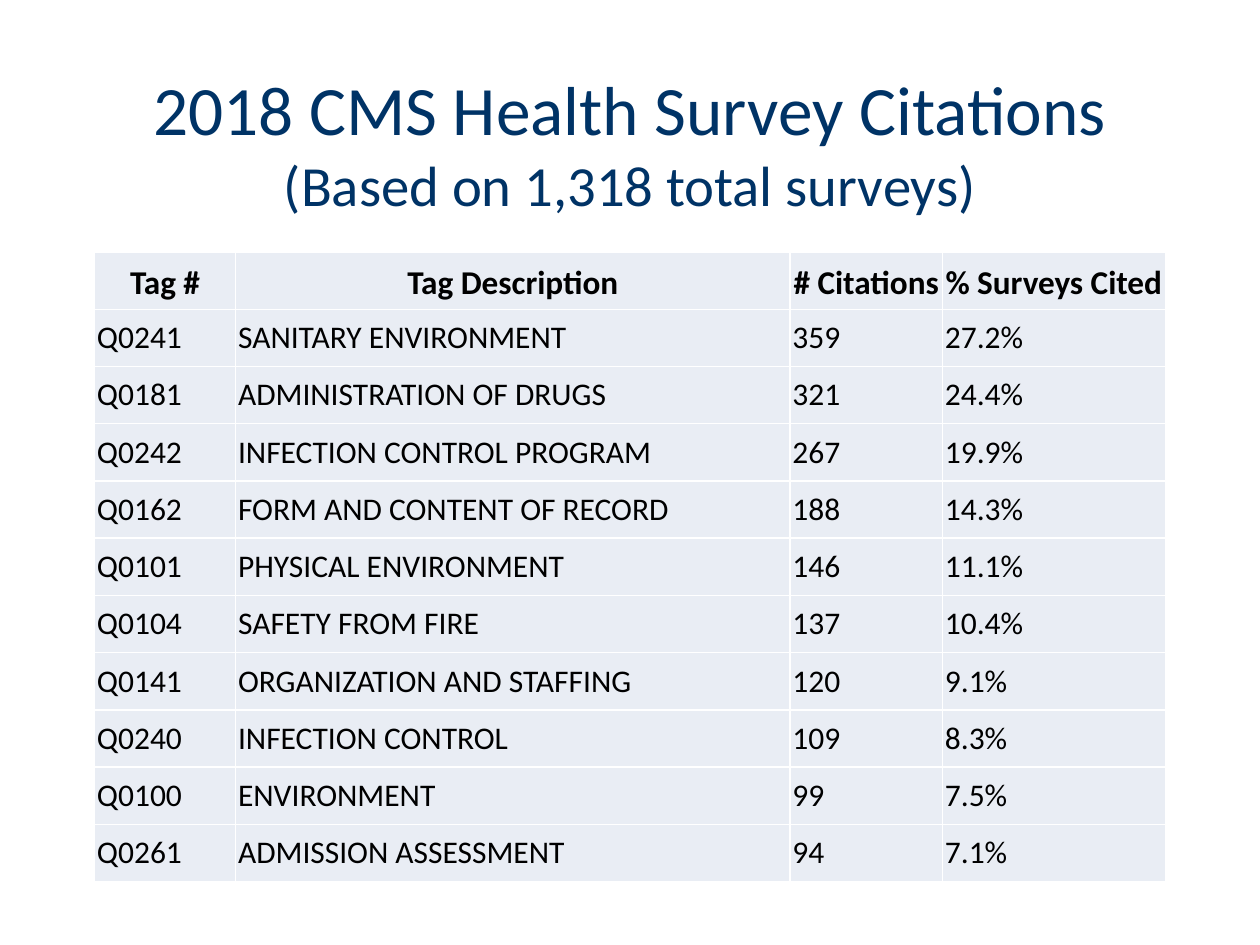
from lxml.etree import SubElement
from pptx import Presentation
from pptx.dml.color import RGBColor
from pptx.enum.text import MSO_ANCHOR, PP_ALIGN
from pptx.oxml.ns import qn
from pptx.util import Inches, Pt

NAVY = RGBColor(0x00, 0x33, 0x66)
BLACK = RGBColor(0x00, 0x00, 0x00)
PALE_BLUE = RGBColor(0xE9, 0xED, 0xF4)
WHITE = RGBColor(0xFF, 0xFF, 0xFF)

TITLE_LINES = [
    ("2018 CMS Health Survey Citations", 39.6),
    ("(Based on 1,318 total surveys)", 32.4),
]
CITATIONS = [
    ("Tag #", "Tag Description", "# Citations", "% Surveys Cited"),
    ("Q0241", "SANITARY ENVIRONMENT", "359", "27.2%"),
    ("Q0181", "ADMINISTRATION OF DRUGS", "321", "24.4%"),
    ("Q0242", "INFECTION CONTROL PROGRAM", "267", "19.9%"),
    ("Q0162", "FORM AND CONTENT OF RECORD", "188", "14.3%"),
    ("Q0101", "PHYSICAL ENVIRONMENT", "146", "11.1%"),
    ("Q0104", "SAFETY FROM FIRE", "137", "10.4%"),
    ("Q0141", "ORGANIZATION AND STAFFING", "120", "9.1%"),
    ("Q0240", "INFECTION CONTROL", "109", "8.3%"),
    ("Q0100", "ENVIRONMENT", "99", "7.5%"),
    ("Q0261", "ADMISSION ASSESSMENT", "94", "7.1%"),
]
COLUMN_WIDTHS = [1.12, 4.4, 1.21, 1.77]
TABLE_HEIGHT = 5

HEADER_CELL = {
    "vertical_anchor": MSO_ANCHOR.BOTTOM,
    "margin_left": Inches(0.01),
    "margin_right": Inches(0.01),
    "margin_top": Inches(0.01),
    "margin_bottom": Inches(0.05),
}
BODY_CELL = {
    "vertical_anchor": MSO_ANCHOR.MIDDLE,
    "margin_left": Inches(0.02),
    "margin_right": Inches(0.02),
    "margin_top": Inches(0.02),
    "margin_bottom": Inches(0.02),
}
HEADER_FONT = {"name": "Calibri", "size": Pt(19), "bold": True}
BODY_FONT = {"name": "Calibri", "size": Pt(18), "bold": False}


def apply_format(target, values):
    for attribute, value in values.items():
        setattr(target, attribute, value)


def add_borders(cell):
    properties = cell._tc.get_or_add_tcPr()
    for position, side in enumerate(("lnL", "lnR", "lnT", "lnB")):
        border = properties.makeelement(qn(f"a:{side}"), {"w": str(Pt(1))})
        fill = SubElement(border, qn("a:solidFill"))
        SubElement(fill, qn("a:srgbClr"), val=str(WHITE))
        properties.insert(position, border)


def add_title(slide):
    title = slide.shapes.add_textbox(Inches(0.5), Inches(0.5), Inches(9), Inches(1.25))
    frame = title.text_frame
    apply_format(frame, {"word_wrap": True, "vertical_anchor": MSO_ANCHOR.MIDDLE})
    heading = frame.paragraphs[0]
    heading.alignment = PP_ALIGN.CENTER
    for index, (line, size) in enumerate(TITLE_LINES):
        if index:
            heading.add_line_break()
        run = heading.add_run()
        run.text = line
        apply_format(run.font, {"name": "Calibri", "size": Pt(size)})
        run.font.color.rgb = NAVY


def add_citations(slide):
    table = slide.shapes.add_table(
        len(CITATIONS), len(COLUMN_WIDTHS), Inches(0.75), Inches(2),
        Inches(sum(COLUMN_WIDTHS)), Inches(TABLE_HEIGHT),
    ).table
    table.horz_banding = False
    for column, width in zip(table.columns, COLUMN_WIDTHS):
        column.width = Inches(width)
    for row_index, entries in enumerate(CITATIONS):
        is_header = row_index == 0
        table.rows[row_index].height = Inches(TABLE_HEIGHT / len(CITATIONS))
        for column_index, entry in enumerate(entries):
            cell = table.cell(row_index, column_index)
            apply_format(cell, HEADER_CELL if is_header else BODY_CELL)
            cell.fill.solid()
            cell.fill.fore_color.rgb = PALE_BLUE
            add_borders(cell)
            paragraph = cell.text_frame.paragraphs[0]
            paragraph.alignment = PP_ALIGN.CENTER if is_header else PP_ALIGN.LEFT
            run = paragraph.add_run()
            run.text = entry
            apply_format(run.font, HEADER_FONT if is_header else BODY_FONT)
            run.font.color.rgb = BLACK


def main():
    presentation = Presentation()
    presentation.slide_width = Inches(10)
    presentation.slide_height = Inches(7.5)
    slide = presentation.slides.add_slide(presentation.slide_layouts[6])
    add_title(slide)
    add_citations(slide)
    presentation.save("out.pptx")


if __name__ == "__main__":
    main()
